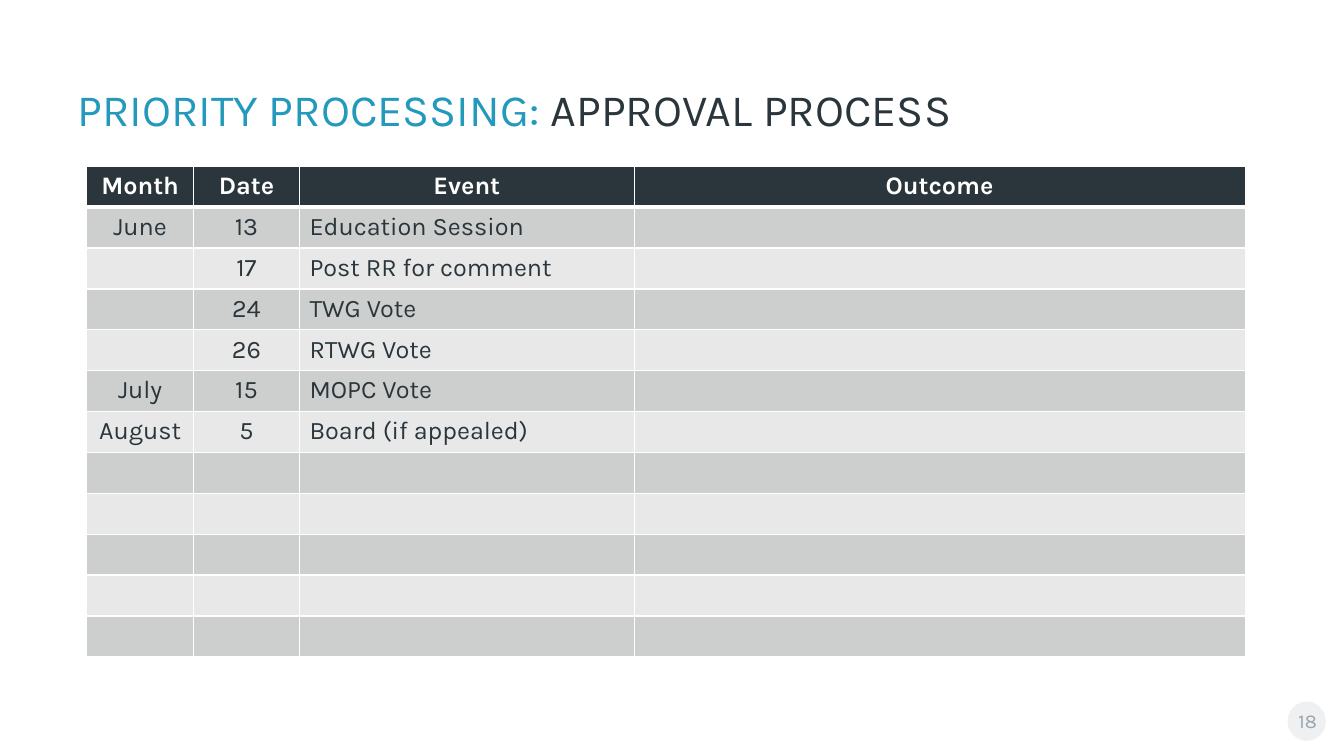
from lxml.etree import SubElement
from pptx import Presentation
from pptx.dml.color import RGBColor
from pptx.enum.shapes import MSO_SHAPE
from pptx.enum.text import MSO_ANCHOR, PP_ALIGN
from pptx.oxml.ns import qn
from pptx.util import Inches, Pt

FONT = "Karla"
DARK = RGBColor(0x2A, 0x36, 0x3B)
BLUE = RGBColor(0x23, 0x99, 0xBB)
WHITE = RGBColor(0xFF, 0xFF, 0xFF)
BANDS = (RGBColor(0xCD, 0xCE, 0xCE), RGBColor(0xE8, 0xE8, 0xE8))
BADGE = RGBColor(0xEE, 0xF0, 0xF1)
BADGE_TEXT = RGBColor(0x99, 0xA4, 0xAD)

HEADERS = ("Month", "Date", "Event", "Outcome")
EVENTS = (
    ("June", "13", "Education Session", ""),
    ("", "17", "Post RR for comment", ""),
    ("", "24", "TWG Vote", ""),
    ("", "26", "RTWG Vote", ""),
    ("July", "15", "MOPC Vote", ""),
    ("August", "5", "Board (if appealed)", ""),
)
EMPTY_ROWS = 5
COLUMN_WIDTHS = (1.06, 1.05, 3.32, 6.06)
TABLE_HEIGHT = 4.87
EVENT_COLUMN = 2


def add_run(paragraph, text, size, color, bold=False):
    run = paragraph.add_run()
    run.text = text
    run.font.name = FONT
    run.font.size = Pt(size)
    run.font.bold = bold
    run.font.color.rgb = color


def add_title(slide):
    title = slide.shapes.title
    title.left, title.top = Inches(0.67), Inches(0.62)
    title.width, title.height = Inches(11.97), Inches(1.03)
    title.text_frame.vertical_anchor = MSO_ANCHOR.MIDDLE
    paragraph = title.text_frame.paragraphs[0]
    paragraph.alignment = PP_ALIGN.LEFT
    paragraph.line_spacing = 0.75
    add_run(paragraph, "PRIORITY PROCESSING: ", 32, BLUE)
    add_run(paragraph, "APPROVAL PROCESS", 32, DARK)


def set_borders(cell, top, bottom):
    """Draw white cell borders; top and bottom are widths in points."""
    properties = cell._tc.get_or_add_tcPr()
    for side, width in (("L", 1), ("R", 1), ("T", top), ("B", bottom)):
        line = SubElement(properties, qn(f"a:ln{side}"), w=str(Pt(width)))
        fill = SubElement(line, qn("a:solidFill"))
        SubElement(fill, qn("a:srgbClr"), val=str(WHITE))


def fill_cell(cell, text, row, column):
    header = row == 0
    set_borders(cell, top=3 if row == 1 else 1, bottom=3 if header else 1)
    cell.fill.solid()
    cell.fill.fore_color.rgb = DARK if header else BANDS[(row - 1) % 2]
    paragraph = cell.text_frame.paragraphs[0]
    centered = header or column < EVENT_COLUMN
    paragraph.alignment = PP_ALIGN.CENTER if centered else PP_ALIGN.LEFT
    if text:
        add_run(paragraph, text, 18, WHITE if header else DARK, header)
    else:
        paragraph.font.name = FONT
        paragraph.font.size = Pt(18)


def add_schedule(slide):
    blank = ("",) * len(HEADERS)
    rows = (HEADERS, *EVENTS, *[blank] * EMPTY_ROWS)
    table = slide.shapes.add_table(
        len(rows), len(HEADERS), Inches(0.86), Inches(1.65),
        Inches(sum(COLUMN_WIDTHS)), Inches(TABLE_HEIGHT)).table
    for column, width in zip(table.columns, COLUMN_WIDTHS):
        column.width = Inches(width)
    for row, texts in enumerate(rows):
        table.rows[row].height = Inches(TABLE_HEIGHT / len(rows))
        for column, text in enumerate(texts):
            fill_cell(table.cell(row, column), text, row, column)


def add_page_number(slide, number):
    circle = slide.shapes.add_shape(
        MSO_SHAPE.OVAL, Inches(12.77), Inches(6.96), Inches(0.38), Inches(0.39))
    circle.shadow.inherit = False
    circle.fill.solid()
    circle.fill.fore_color.rgb = BADGE
    circle.line.fill.background()

    label = slide.shapes.add_textbox(
        Inches(12.77), Inches(6.92), Inches(0.4), Inches(0.4))
    frame = label.text_frame
    frame.word_wrap = True
    frame.vertical_anchor = MSO_ANCHOR.BOTTOM
    frame.margin_left = frame.margin_right = Inches(0.03)
    paragraph = frame.paragraphs[0]
    paragraph.alignment = PP_ALIGN.CENTER
    add_run(paragraph, number, 14, BADGE_TEXT)


def main():
    presentation = Presentation()
    presentation.slide_width = Inches(13.33)
    presentation.slide_height = Inches(7.5)
    slide = presentation.slides.add_slide(presentation.slide_layouts[5])
    add_page_number(slide, "18")
    add_title(slide)
    add_schedule(slide)
    presentation.save("out.pptx")


if __name__ == "__main__":
    main()
